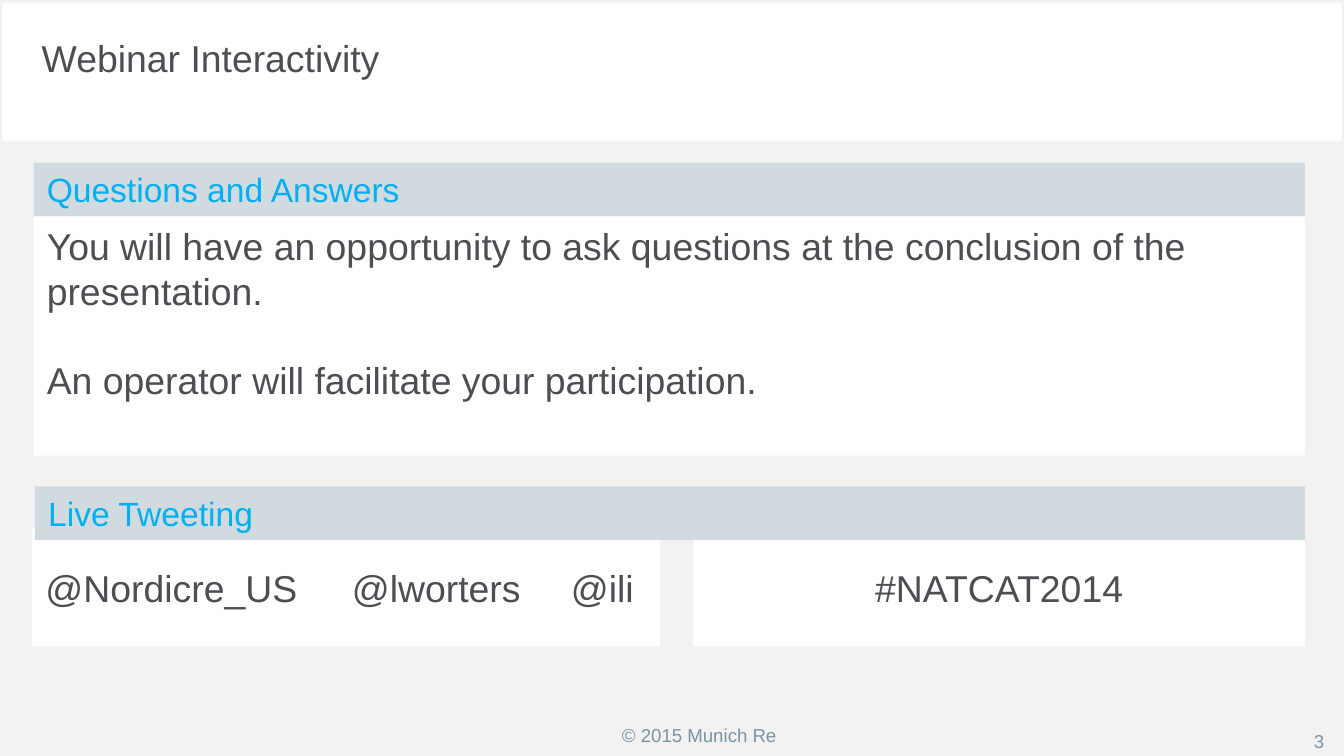
import pptx
import pptx.util
import pptx.dml.color
import pptx.enum.shapes
import pptx.enum.text
import pptx.oxml.xmlchemy
from pptx.util import Inches

ALIGN = pptx.enum.text.PP_ALIGN
ANCHOR = pptx.enum.text.MSO_ANCHOR

COLORS = {
    "page": "F2F2F2",
    "panel": "FFFFFF",
    "band": "D1DADF",
    "heading": "00B0F0",
    "body": "4D4E53",
    "footer": "7A94A3",
}
SLIDE_WIDTH = 10
SLIDE_HEIGHT = SLIDE_WIDTH * 9 / 16
RIGHT_EDGE = 9.71
BAND_HEIGHT = 0.4

TITLE = "Webinar Interactivity"
# heading, left, top
BANDS = [
    ("Questions and Answers", 0.25, 1.21),
    ("Live Tweeting", 0.26, 3.62),
]
# paragraphs, left, top, right, bottom, format
PANELS = [
    (["You will have an opportunity to ask questions at the conclusion of the presentation.",
      "An operator will facilitate your participation."],
     0.25, 1.61, RIGHT_EDGE, 3.39, {"gap": 24}),
    (["@Nordicre_US\t@lworters\t@ili"],
     0.24, 3.93, 4.91, 4.81, {"anchor": ANCHOR.MIDDLE, "tabs": [2.28, 3.91]}),
    (["#NATCAT2014"],
     5.16, 3.93, RIGHT_EDGE, 4.81, {"anchor": ANCHOR.MIDDLE, "align": ALIGN.CENTER}),
]
# text, left, top, width, align, wrap
FOOTERS = [
    ("© 2015 Munich Re", 4.53, 5.34, 1.36, ALIGN.LEFT, False),
    ("3", 9.2, 5.38, 0.75, ALIGN.RIGHT, True),
]


def rgb(name):
    return pptx.dml.color.RGBColor.from_string(COLORS[name])


def write(shape, paragraphs, size=20, color="body", align=ALIGN.LEFT, anchor=ANCHOR.TOP,
          wrap=True, margins=(0.1, 0.05), gap=0, tabs=()):
    """Fill a shape with paragraphs; gap is the points between them, tabs are in inches."""
    frame = shape.text_frame
    frame.word_wrap = wrap
    frame.vertical_anchor = anchor
    frame.margin_left = frame.margin_right = Inches(margins[0])
    frame.margin_top = frame.margin_bottom = Inches(margins[1])
    for index, text in enumerate(paragraphs):
        paragraph = frame.add_paragraph() if index else frame.paragraphs[0]
        paragraph.alignment = align
        if index:
            paragraph.space_before = pptx.util.Pt(gap)
        if tabs:
            tab_list = pptx.oxml.xmlchemy.OxmlElement("a:tabLst")
            for position in tabs:
                tab = pptx.oxml.xmlchemy.OxmlElement("a:tab")
                tab.set("pos", str(Inches(position)))
                tab.set("algn", "l")
                tab_list.append(tab)
            paragraph._p.get_or_add_pPr().append(tab_list)
        run = paragraph.add_run()
        run.text = text
        run.font.name = "Arial"
        run.font.size = pptx.util.Pt(size)
        run.font.bold = False
        run.font.color.rgb = rgb(color)


def add_rectangle(slide, left, top, right, bottom, fill=None, line=None):
    rectangle = slide.shapes.add_shape(
        pptx.enum.shapes.MSO_SHAPE.RECTANGLE,
        Inches(left), Inches(top), Inches(right - left), Inches(bottom - top))
    rectangle.shadow.inherit = False
    if fill:
        rectangle.fill.solid()
        rectangle.fill.fore_color.rgb = rgb(fill)
    else:
        rectangle.fill.background()
    if line:
        rectangle.line.color.rgb = rgb(line)
        rectangle.line.width = pptx.util.Pt(2)
    else:
        rectangle.line.fill.background()
    return rectangle


def main():
    deck = pptx.Presentation()
    deck.slide_width, deck.slide_height = Inches(SLIDE_WIDTH), Inches(SLIDE_HEIGHT)
    slide = deck.slides.add_slide(deck.slide_layouts[5])

    add_rectangle(slide, 0, 1.05, SLIDE_WIDTH, SLIDE_HEIGHT, fill="page")
    add_rectangle(slide, 0, 0.01, SLIDE_WIDTH, SLIDE_HEIGHT, line="page")

    title = slide.shapes.title
    title.left, title.top = Inches(0.31), Inches(0.26)
    title.width, title.height = Inches(7.48), Inches(0.59)
    write(title, [TITLE], margins=(0, 0))

    for paragraphs, left, top, right, bottom, text_format in PANELS:
        panel = add_rectangle(slide, left, top, right, bottom, fill="panel")
        write(panel, paragraphs, **text_format)

    for heading, left, top in BANDS:
        band = add_rectangle(slide, left, top, RIGHT_EDGE, top + BAND_HEIGHT, fill="band")
        write(band, [heading], size=18, color="heading")

    for text, left, top, width, align, wrap in FOOTERS:
        footer = slide.shapes.add_textbox(Inches(left), Inches(top), Inches(width), Inches(0.27))
        write(footer, [text], size=10, color="footer", align=align, wrap=wrap)

    deck.save("out.pptx")


if __name__ == "__main__":
    main()
